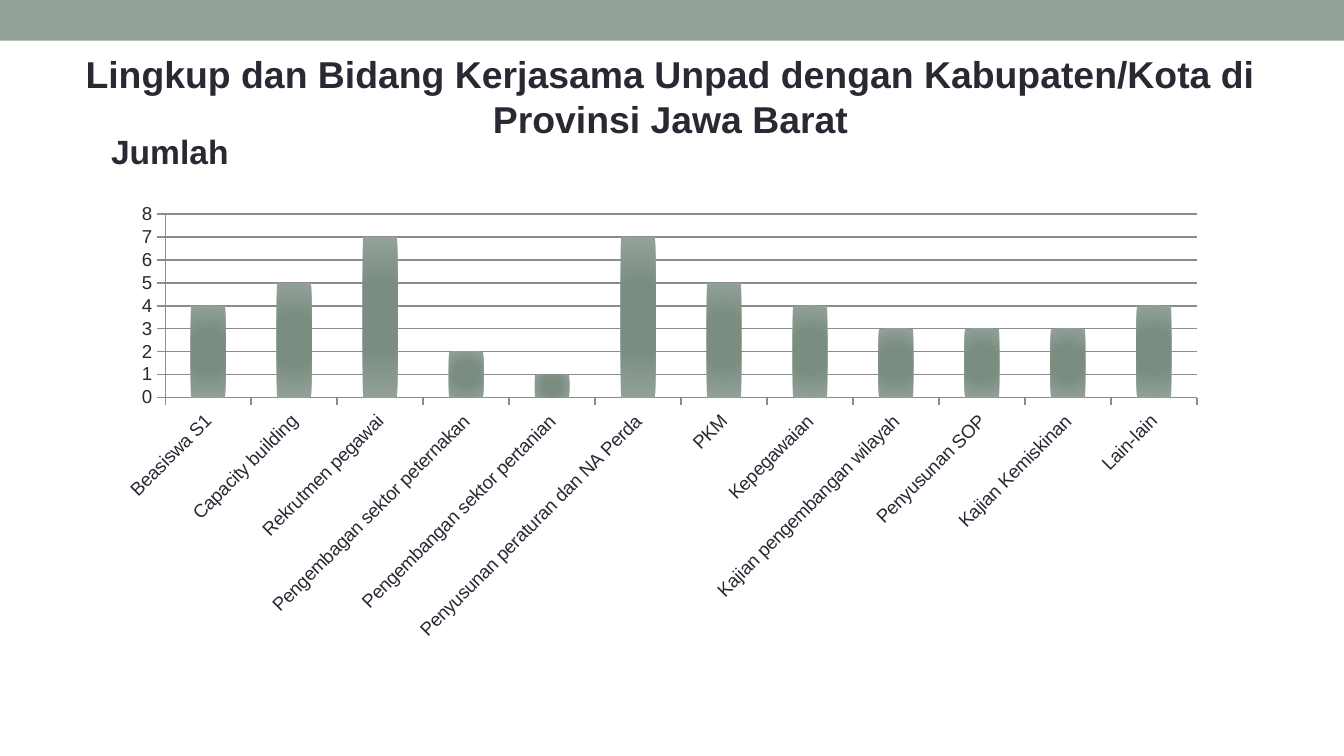
from dataclasses import dataclass

from lxml.etree import SubElement
from pptx import Presentation
from pptx.chart.data import CategoryChartData
from pptx.dml.color import RGBColor
from pptx.enum.chart import XL_CHART_TYPE, XL_TICK_MARK
from pptx.enum.shapes import MSO_SHAPE
from pptx.enum.text import MSO_ANCHOR, MSO_AUTO_SIZE, PP_ALIGN
from pptx.oxml.ns import qn
from pptx.util import Pt

PX = 9525  # EMU in one px, 96 px to the inch
SLIDE_W, SLIDE_H = 960, 540
CHART_W, CHART_H = 797, 381


@dataclass(frozen=True)
class Theme:
    font: str = "Arial"
    text: RGBColor = RGBColor(0x29, 0x29, 0x34)
    sage: RGBColor = RGBColor(0x93, 0xA2, 0x99)
    dark_sage: RGBColor = RGBColor(0x7A, 0x8D, 0x80)
    grid: RGBColor = RGBColor(0x8C, 0x8C, 0x8C)
    title_size: Pt = Pt(20)
    chart_title_size: Pt = Pt(18)
    label_size: Pt = Pt(10)


THEME = Theme()

TITLE = "Lingkup dan Bidang Kerjasama Unpad dengan Kabupaten/Kota di Provinsi Jawa Barat"
SERIES = "Jumlah"
COUNTS = {
    "Beasiswa S1": 4,
    "Capacity building": 5,
    "Rekrutmen pegawai": 7,
    "Pengembagan sektor peternakan": 2,
    "Pengembangan sektor pertanian": 1,
    "Penyusunan peraturan dan NA Perda": 7,
    "PKM": 5,
    "Kepegawaian": 4,
    "Kajian pengembangan wilayah": 3,
    "Penyusunan SOP": 3,
    "Kajian Kemiskinan": 3,
    "Lain-lain": 4,
}


def px(*lengths):
    return [n * PX for n in lengths]


def set_attrs(obj, values):
    for name, value in values.items():
        setattr(obj, name, value)


def style_font(font, size, bold=False):
    set_attrs(font, {"name": THEME.font, "size": size, "bold": bold})
    font.color.rgb = THEME.text


def style_line(line):
    line.color.rgb = THEME.grid
    line.width = Pt(0.75)


def add_band(s):
    sp = s.shapes.add_shape(MSO_SHAPE.RECTANGLE, *px(0, 0, SLIDE_W, 29))
    sp.shadow.inherit = False
    sp.fill.solid()
    sp.fill.fore_color.rgb = THEME.sage
    sp.line.fill.background()


def set_title(s):
    sp = s.shapes.title
    set_attrs(sp, dict(zip(("left", "top", "width", "height"), px(23, 32, 912, 74))))
    tf = sp.text_frame
    set_attrs(tf, {"word_wrap": True, "auto_size": MSO_AUTO_SIZE.NONE,
                   "vertical_anchor": MSO_ANCHOR.TOP})
    p = tf.paragraphs[0]
    set_attrs(p, {"alignment": PP_ALIGN.CENTER, "line_spacing": 1.0})
    r = p.add_run()
    r.text = TITLE
    style_font(r.font, THEME.title_size, bold=True)


def place(parent, index, left, top, size=None):
    """Lay out a chart part at a px offset within the chart."""
    for old in parent.findall(qn("c:layout")):
        parent.remove(old)
    layout = parent.makeelement(qn("c:layout"))
    parent.insert(index, layout)
    manual = SubElement(layout, qn("c:manualLayout"))
    values = {"xMode": "edge", "yMode": "edge",
              "x": left / CHART_W, "y": top / CHART_H}
    if size:
        values = {"layoutTarget": "inner", **values,
                  "w": size[0] / CHART_W, "h": size[1] / CHART_H}
    for name, value in values.items():
        SubElement(manual, qn(f"c:{name}")).set("val", str(value))


def fill_radial(series):
    fill = series.format.fill
    fill.gradient()
    stops = zip(fill.gradient_stops, (0.4, 1), (THEME.dark_sage, THEME.sage))
    for stop, position, color in stops:
        stop.position = position
        stop.color.rgb = color
    # A circular gradient takes the place of the linear one
    grad = series._element.find(qn("c:spPr")).find(qn("a:gradFill"))
    grad.remove(grad.find(qn("a:lin")))
    circle = SubElement(grad, qn("a:path"), {"path": "circle"})
    SubElement(circle, qn("a:fillToRect"), dict.fromkeys("ltrb", "50000"))


def style_axis(axis):
    set_attrs(axis, {"major_tick_mark": XL_TICK_MARK.OUTSIDE,
                     "minor_tick_mark": XL_TICK_MARK.NONE})
    style_font(axis.tick_labels.font, THEME.label_size)
    style_line(axis.format.line)


def add_count_chart(s):
    data = CategoryChartData()
    data.categories = list(COUNTS)
    data.add_series(SERIES, list(COUNTS.values()))
    chart = s.shapes.add_chart(
        XL_CHART_TYPE.COLUMN_CLUSTERED, *px(75, 84, CHART_W, CHART_H), data).chart
    set_attrs(chart, {"has_legend": False, "has_title": True})
    style_font(chart.font, THEME.label_size)

    # Chart title at the upper left
    tf = chart.chart_title.text_frame
    tf.text = SERIES
    style_font(tf.paragraphs[0].runs[0].font, THEME.chart_title_size, bold=True)
    place(chart.chart_title._element, 1, 0, 4)

    # Columns
    plot = chart.plots[0]
    set_attrs(plot, {"gap_width": 150, "vary_by_categories": False})
    fill_radial(plot.series[0])
    place(plot._element.getparent(), 0, 43, 69, size=(737, 131))

    # Axes, with slanted category labels
    for axis in (chart.category_axis, chart.value_axis):
        style_axis(axis)
    set_attrs(chart.value_axis, {"minimum_scale": 0, "maximum_scale": 8,
                                 "major_unit": 1, "has_major_gridlines": True})
    style_line(chart.value_axis.major_gridlines.format.line)
    body = chart.category_axis._element.find(qn("c:txPr")).find(qn("a:bodyPr"))
    body.set("rot", str(-45 * 60000))


def main():
    prs = Presentation()
    prs.slide_width, prs.slide_height = px(SLIDE_W, SLIDE_H)
    s = prs.slides.add_slide(prs.slide_layouts[5])
    add_band(s)
    set_title(s)
    add_count_chart(s)
    prs.save("out.pptx")


if __name__ == "__main__":
    main()
